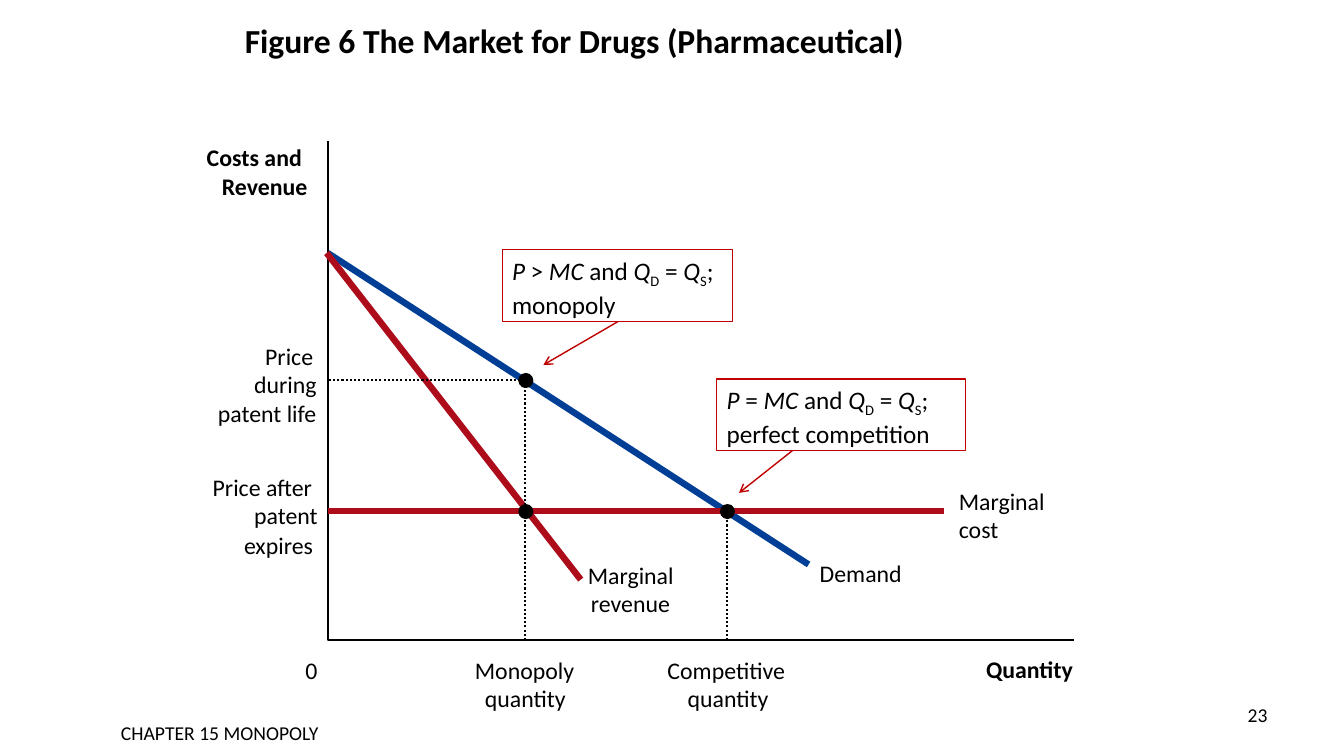
from dataclasses import dataclass

from lxml.etree import SubElement
from pptx import Presentation
from pptx.dml.color import RGBColor
from pptx.enum.dml import MSO_LINE
from pptx.enum.shapes import MSO_CONNECTOR, MSO_SHAPE
from pptx.enum.text import MSO_ANCHOR, MSO_AUTO_SIZE, PP_ALIGN
from pptx.oxml.ns import qn
from pptx.util import Pt

PX = 9144
TWO_LINE_PITCH = 57
LABEL_HEIGHT = 29
DOT_SIZE = 15


@dataclass(frozen=True)
class Theme:
    """Colours, font, type sizes and line widths."""
    font: str = "Calibri"
    ink: RGBColor = RGBColor(0x00, 0x00, 0x00)
    demand: RGBColor = RGBColor(0x00, 0x3F, 0x95)
    cost: RGBColor = RGBColor(0xAD, 0x0D, 0x1B)
    callout: RGBColor = RGBColor(0xC0, 0x00, 0x00)
    title_size: float = 24
    callout_size: float = 18
    label_size: float = 17
    footer_size: float = 14
    curve_width: float = 4.63
    axis_width: float = 1.5
    arrow_width: float = 1
    border_width: float = 0.75


@dataclass(frozen=True)
class Box:
    """A region of the slide in px."""
    left: int
    top: int
    width: int
    height: int

    def inside(self, left, top, width, height):
        """Return a box placed relative to this one."""
        return Box(self.left + left, self.top + top, width, height)

    def point(self, x, y):
        """Return the slide position of a point in this box."""
        return self.left + x, self.top + y

    def emu(self):
        """Return the four lengths in EMU."""
        return [length * PX for length in (self.left, self.top, self.width, self.height)]


THEME = Theme()


def style_font(paragraph, size, bold=False):
    """Set the font of a whole paragraph."""
    font = paragraph.font
    font.name, font.size, font.bold = THEME.font, Pt(size), bold
    font.color.rgb = THEME.ink


def add_text(slide, box, text, size, bold=False, align=PP_ALIGN.LEFT):
    """Add a wrapping one-paragraph text box and return its frame."""
    frame = slide.shapes.add_textbox(*box.emu()).text_frame
    frame.word_wrap = True
    paragraph = frame.paragraphs[0]
    paragraph.text, paragraph.alignment = text, align
    style_font(paragraph, size, bold)
    return frame


def add_label(slide, region, top, lines, bold=False):
    """Stack label lines, each given as text, left and width."""
    for index, (text, left, width) in enumerate(lines):
        line_top = top + index * TWO_LINE_PITCH // 2
        box = region.inside(left, line_top, width, LABEL_HEIGHT)
        frame = add_text(slide, box, text, THEME.label_size, bold)
        frame.word_wrap = False
        frame.auto_size = MSO_AUTO_SIZE.SHAPE_TO_FIT_TEXT
        frame.margin_left = frame.margin_right = 0
        frame.margin_top = frame.margin_bottom = 0


def style_line(line, color, width, dotted=False):
    """Set the colour, width and dash of a line."""
    line.color.rgb, line.width = color, Pt(width)
    if dotted:
        line.dash_style = MSO_LINE.ROUND_DOT


def add_line(slide, region, start, end, color, width, dotted=False):
    """Join two points of the region with a straight line."""
    ends = [length * PX for length in region.point(*start) + region.point(*end)]
    connector = slide.shapes.add_connector(MSO_CONNECTOR.STRAIGHT, *ends)
    style_line(connector.line, color, width, dotted)
    SubElement(connector._element.spPr, qn("a:effectLst"))
    return connector


def add_path(slide, region, points, dotted=False):
    """Draw an open black path through points of the region."""
    first, *rest = [region.point(*point) for point in points]
    builder = slide.shapes.build_freeform(*first, scale=PX)
    builder.add_line_segments(rest, close=False)
    shape = builder.convert_to_shape()
    shape.shadow.inherit = False
    shape.fill.background()
    style_line(shape.line, THEME.ink, THEME.axis_width, dotted)


def add_dot(slide, region, x, y):
    """Mark an intersection with a black dot."""
    box = region.inside(x - DOT_SIZE // 2, y - DOT_SIZE // 2, DOT_SIZE, DOT_SIZE)
    dot = slide.shapes.add_shape(MSO_SHAPE.OVAL, *box.emu())
    dot.shadow.inherit = False
    dot.fill.solid()
    dot.fill.fore_color.rgb = THEME.ink
    dot.line.fill.background()


def add_callout(slide, region, box, relation, market, start, end):
    """Add a bordered condition with an arrow to its intersection."""
    shape = slide.shapes.add_shape(MSO_SHAPE.RECTANGLE, *box.emu())
    shape.shadow.inherit = False
    shape.fill.background()
    style_line(shape.line, THEME.callout, THEME.border_width)
    frame = shape.text_frame
    frame.word_wrap, frame.vertical_anchor = True, MSO_ANCHOR.TOP
    paragraph = frame.paragraphs[0]
    paragraph.alignment = PP_ALIGN.LEFT
    style_font(paragraph, THEME.callout_size)
    pieces = ["P", f" {relation} ", "MC", " and ", "Q", "D", " = ", "Q", "S", f"; {market}"]
    for piece in pieces:
        run = paragraph.add_run()
        run.text = piece
        run.font.italic = piece in ("P", "MC", "Q")
        if piece in ("D", "S"):
            run.font._element.set("baseline", "-25000")
    arrow = add_line(slide, region, start, end, THEME.callout, THEME.arrow_width)
    SubElement(arrow.line._get_or_add_ln(), qn("a:tailEnd"), type="arrow")


def add_market_diagram(slide, region):
    """Draw the axes, curves, labels and callouts of the drug market."""
    axis_x, axis_y = 125, region.height - 75
    monopoly_x, competitive_x = 321, 521
    monopoly_price, marginal_cost = 237, 367
    add_path(slide, region, [(axis_x, 0), (axis_x, axis_y), (865, axis_y)])
    add_line(slide, region, (axis_x, 111), (602, 420), THEME.demand, THEME.curve_width)
    add_line(slide, region, (124, 111), (376, 435), THEME.cost, THEME.curve_width)
    add_path(slide, region, [(monopoly_x, axis_y), (monopoly_x, monopoly_price),
                             (axis_x, monopoly_price)], dotted=True)
    add_line(slide, region, (axis_x, marginal_cost), (736, marginal_cost),
             THEME.cost, THEME.curve_width)
    add_line(slide, region, (competitive_x, axis_y), (competitive_x, marginal_cost + 2),
             THEME.ink, THEME.axis_width, dotted=True)
    for x, y in [(monopoly_x, monopoly_price), (monopoly_x, marginal_cost),
                 (competitive_x, marginal_cost)]:
        add_dot(slide, region, x, y)

    add_label(slide, region, 2, [("Costs and", 5, 95), ("Revenue", 20, 85)], bold=True)
    add_label(slide, region, axis_y + 14, [("Quantity", 778, 87)], bold=True)
    for top, lines in [
        (axis_y + 15, [("0", 103, 12)]),
        (axis_y + 15, [("Monopoly", 271, 99), ("quantity", 281, 84)]),
        (axis_y + 15, [("Competitive", 462, 118), ("quantity", 482, 84)]),
        (199, [("Price", 63, 48), ("during", 52, 63), ("patent life", 16, 99)]),
        (329, [("Price after", 11, 100), ("patent", 52, 64), ("expires", 42, 69)]),
        (414, [("Demand", 613, 82)]),
        (416, [("Marginal", 383, 86), ("revenue", 386, 79)]),
        (343, [("Marginal", 751, 86), ("cost", 751, 40)]),
    ]:
        add_label(slide, region, top, lines)

    add_callout(slide, region, region.inside(298, 108, 229, 71), ">", "monopoly",
                (413, 179), (339, 222))
    add_callout(slide, region, region.inside(511, 236, 247, 71), "=", "perfect competition",
                (586, 307), (533, 349))


def add_title(slide, box):
    """Add the figure title."""
    frame = add_text(slide, box, "Figure 6 The Market for Drugs (Pharmaceutical)",
                     THEME.title_size, bold=True)
    frame.vertical_anchor = MSO_ANCHOR.MIDDLE
    frame.paragraphs[0].line_spacing = 0.8


def add_footer(slide, box):
    """Add the chapter name and the slide number."""
    add_text(slide, box.inside(0, 18, 372, 33), "CHAPTER 15 MONOPOLY",
             THEME.footer_size, align=PP_ALIGN.CENTER)
    add_text(slide, box.inside(box.width - 81, 0, 81, 52), "23",
             THEME.footer_size, align=PP_ALIGN.RIGHT)


def main():
    """Build and save the slide."""
    presentation = Presentation()
    presentation.slide_width, presentation.slide_height = 1333 * PX, 750 * PX
    slide = presentation.slides.add_slide(presentation.slide_layouts[6])
    add_title(slide, Box(233, 6, 900, 75))
    add_market_diagram(slide, Box(200, 140, 870, 570))
    add_footer(slide, Box(32, 692, 1235, 52))
    presentation.save("out.pptx")


if __name__ == "__main__":
    main()
